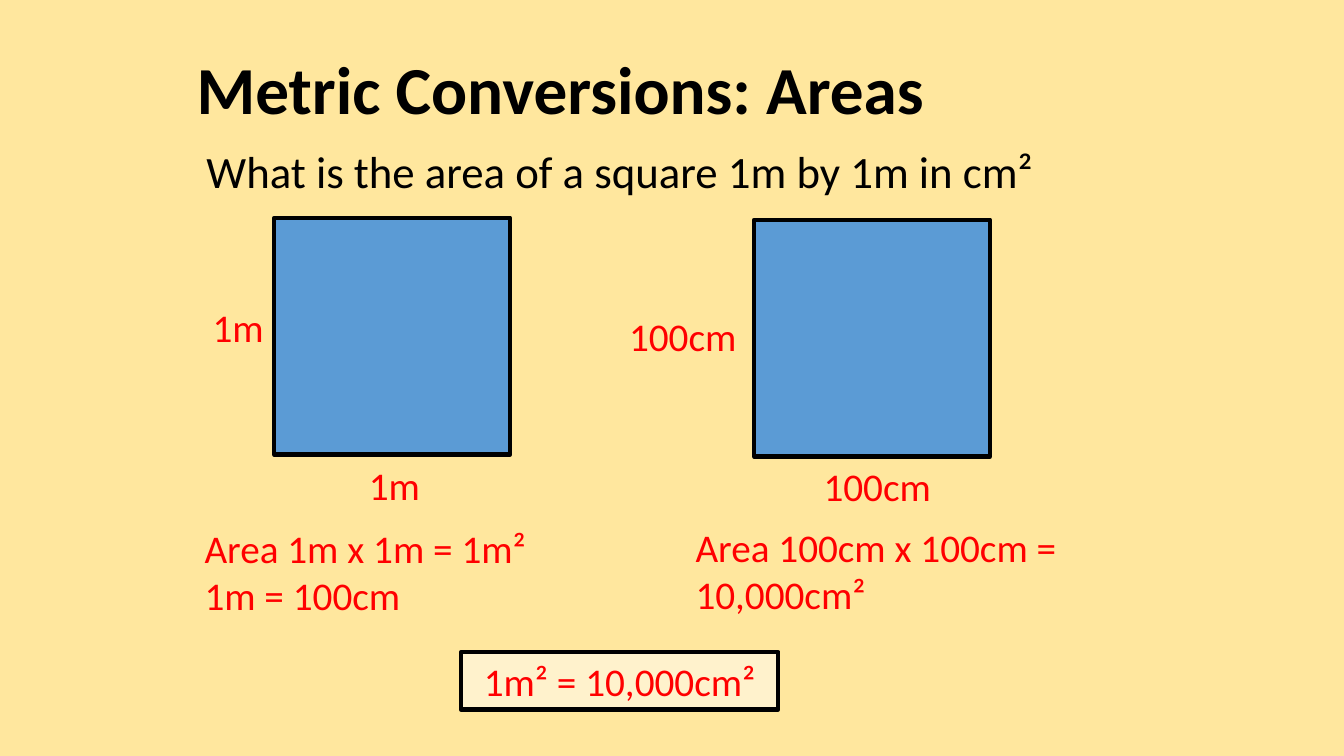
from pptx import Presentation
from pptx.dml.color import RGBColor
from pptx.enum.shapes import MSO_SHAPE
from pptx.enum.text import MSO_ANCHOR, PP_ALIGN
from pptx.util import Inches, Pt

RECTANGLE = MSO_SHAPE.RECTANGLE
TOP = MSO_ANCHOR.TOP
LEFT, CENTER = PP_ALIGN.LEFT, PP_ALIGN.CENTER

BACKGROUND, BLUE, CREAM = "FFE79E", "5B9BD5", "FFF2CC"
BLACK, RED = "000000", "FF0000"
FONT = "Calibri"

TITLE = ("Metric Conversions: Areas", (1.85, 0.42, 7.93, 0.91))
QUESTION = ("What is the area of a square 1m by 1m in cm²", (1.95, 1.38, 9.43, 0.64))
SQUARES = [
    {
        "at": (2.72, 2.16, 2.34, 2.35),
        "side": "1m",
        "side_spots": [(3.56, 4.53, 0.72, 0.57), (2.01, 2.96, 0.72, 0.57)],
        "working": ["Area 1m x 1m = 1m²", "1m = 100cm"],
        "working_at": (1.93, 5.15, 3.89, 1.04),
    },
    {
        "at": (7.48, 2.18, 2.34, 2.35),
        "side": "100cm",
        "side_spots": [(8.07, 4.54, 1.28, 0.57), (6.14, 3.05, 1.28, 0.57)],
        "working": ["Area 100cm x 100cm = 10,000cm²"],
        "working_at": (6.8, 5.14, 3.89, 1.04),
    },
]
RESULT = ("1m² = 10,000cm²", (4.57, 6.47, 3.15, 0.57))


def color(value):
    return RGBColor.from_string(value)


def inches(box):
    return [Inches(length) for length in box]


def write(frame, lines, size, ink, align=LEFT, bold=False, wrap=True):
    frame.word_wrap = wrap
    frame.vertical_anchor = TOP
    for index, line in enumerate(lines):
        paragraph = frame.paragraphs[0] if index == 0 else frame.add_paragraph()
        paragraph.alignment = align
        run = paragraph.add_run()
        run.text = line
        run.font.name = FONT
        run.font.size = Pt(size)
        run.font.bold = bold
        run.font.color.rgb = color(ink)


def add_text(slide, lines, box, size, ink, wrap=True):
    frame = slide.shapes.add_textbox(*inches(box)).text_frame
    write(frame, lines, size, ink, wrap=wrap)


def add_outlined(slide, box, fill):
    outlined = slide.shapes.add_shape(RECTANGLE, *inches(box))
    outlined.shadow.inherit = False
    outlined.fill.solid()
    outlined.fill.fore_color.rgb = color(fill)
    outlined.line.color.rgb = color(BLACK)
    outlined.line.width = Pt(3)
    return outlined


def main():
    deck = Presentation()
    deck.slide_width, deck.slide_height = Inches(13.33), Inches(7.5)
    slide = deck.slides.add_slide(deck.slide_layouts[5])
    slide.background.fill.solid()
    slide.background.fill.fore_color.rgb = color(BACKGROUND)

    heading, heading_at = TITLE
    title = slide.shapes.title
    title.left, title.top, title.width, title.height = inches(heading_at)
    write(title.text_frame, [heading], 48, BLACK, bold=True)

    question, question_at = QUESTION
    add_text(slide, [question], question_at, 32, BLACK)

    for square in SQUARES:
        add_outlined(slide, square["at"], BLUE)
        for spot in square["side_spots"]:
            add_text(slide, [square["side"]], spot, 28, RED, wrap=False)
        add_text(slide, square["working"], square["working_at"], 28, RED)

    result, result_at = RESULT
    answer = add_outlined(slide, result_at, CREAM)
    write(answer.text_frame, [result], 28, RED, align=CENTER)

    deck.save("out.pptx")


if __name__ == "__main__":
    main()
